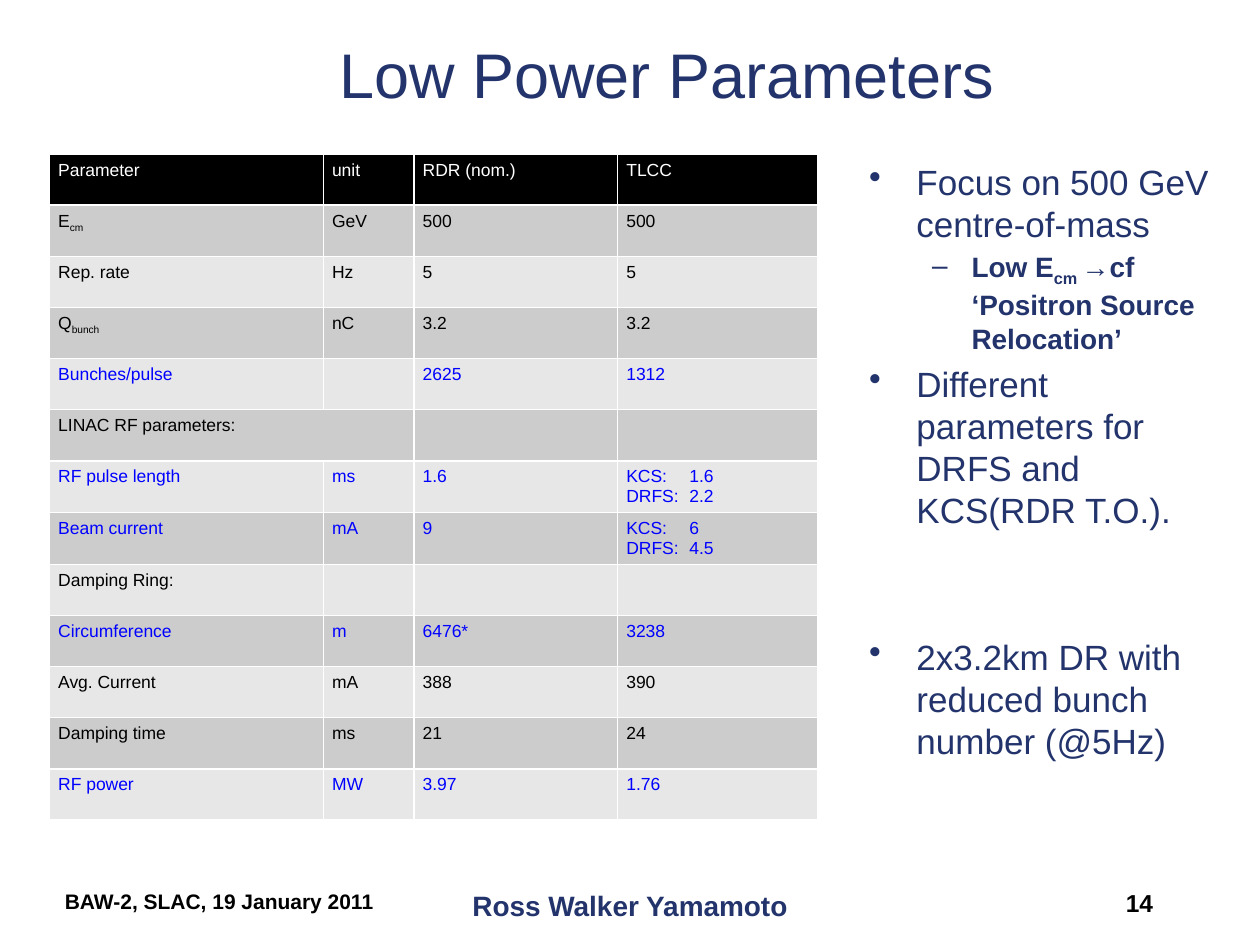
"""Build the Low Power Parameters slide."""
import lxml.etree
import pptx
import pptx.dml.color
import pptx.enum.text
import pptx.oxml.ns
import pptx.util

Pt = pptx.util.Pt
RGBColor = pptx.dml.color.RGBColor
ALIGN = pptx.enum.text.PP_ALIGN
ANCHOR = pptx.enum.text.MSO_ANCHOR
qn = pptx.oxml.ns.qn

NAVY = RGBColor(0x23, 0x34, 0x6C)
BLUE = RGBColor(0x00, 0x00, 0xFF)
BLACK = RGBColor(0x00, 0x00, 0x00)
WHITE = RGBColor(0xFF, 0xFF, 0xFF)
DARK_BAND = RGBColor(0xCC, 0xCC, 0xCC)
LIGHT_BAND = RGBColor(0xE7, 0xE7, 0xE7)

FONT = "Arial"
SUBSCRIPT_MARK = "|"

ROWS = [
    (WHITE, ["Parameter", "unit", "RDR (nom.)", "TLCC"]),
    (BLACK, ["E|cm", "GeV", "500", "500"]),
    (BLACK, ["Rep. rate", "Hz", "5", "5"]),
    (BLACK, ["Q|bunch", "nC", "3.2", "3.2"]),
    (BLUE, ["Bunches/pulse", "", "2625", "1312"]),
    (BLACK, ["LINAC RF parameters:", "", "", ""]),
    (BLUE, ["RF pulse length", "ms", "1.6", "KCS: \t1.6\nDRFS: \t2.2"]),
    (BLUE, ["Beam current", "mA", "9", "KCS: \t6\nDRFS: \t4.5"]),
    (BLACK, ["Damping Ring:", "", "", ""]),
    (BLUE, ["Circumference", "m", "6476*", "3238"]),
    (BLACK, ["Avg. Current", "mA", "388", "390"]),
    (BLACK, ["Damping time", "ms", "21", "24"]),
    (BLUE, ["RF power", "MW", "3.97", "1.76"]),
]
MERGED_ROW = 5
COLUMN_WIDTHS = [156.5, 51.8, 116.4, 114.5]
ROW_HEIGHT = 29.25
TABLE_LEFT, TABLE_TOP = 28.3, 88

BULLETS = [
    ("Focus on 500 GeV centre-of-mass", 0, 0),
    ("Low E|cm |→cf ‘Positron Source Relocation’", 1, 3.2),
    ("Different parameters for DRFS and KCS(RDR T.O.).", 0, 4),
    ("2x3.2km DR with reduced bunch number (@5Hz)", 0, 60),
]
LEVELS = [
    {"mark": "•", "margin": 27, "hang": 27, "size": 20, "bold": False},
    {"mark": "–", "margin": 58.5, "hang": 22.5, "size": 16, "bold": True},
]

LABELS = [
    ("Low Power Parameters", (102, 6, 558, 72), 36, NAVY, False, ALIGN.CENTER, ANCHOR.MIDDLE),
    ("BAW-2, SLAC, 19 January 2011", (30, 504, 244, 36), 12, BLACK, True, ALIGN.LEFT, ANCHOR.TOP),
    ("Ross Walker Yamamoto", (246, 504, 228, 36), 16, NAVY, True, ALIGN.CENTER, ANCHOR.TOP),
    ("14", (516, 504, 150, 36), 14, BLACK, True, ALIGN.RIGHT, ANCHOR.TOP),
]
BODY_AREA = (489.6, 88, 216, 402)


def write(para, text, size, color, bold=False):
    for index, part in enumerate(text.split(SUBSCRIPT_MARK)):
        if part:
            span = para.add_run()
            span.text = part
            if index % 2:
                span.font._element.set("baseline", "-25000")
    para.font.name = FONT
    para.font.size = Pt(size)
    para.font.bold = bold
    para.font.color.rgb = color


def add_box(page, area):
    box = page.shapes.add_textbox(*map(Pt, area))
    box.text_frame.word_wrap = True
    return box.text_frame


def add_borders(cell):
    properties = cell._tc.get_or_add_tcPr()
    for index, side in enumerate(("lnL", "lnR", "lnT", "lnB")):
        line = lxml.etree.Element(qn("a:" + side), w=str(Pt(1)))
        fill = lxml.etree.SubElement(line, qn("a:solidFill"))
        lxml.etree.SubElement(fill, qn("a:srgbClr"), val=str(WHITE))
        properties.insert(index, line)


def add_parameter_table(page):
    frame = page.shapes.add_table(
        len(ROWS), len(COLUMN_WIDTHS), Pt(TABLE_LEFT), Pt(TABLE_TOP),
        Pt(sum(COLUMN_WIDTHS)), Pt(ROW_HEIGHT * len(ROWS)))
    table = frame.table
    table.first_row = False
    table.horz_banding = False
    for column, width in zip(table.columns, COLUMN_WIDTHS):
        column.width = Pt(width)
    for index, (color, texts) in enumerate(ROWS):
        table.rows[index].height = Pt(ROW_HEIGHT)
        band = DARK_BAND if index % 2 else LIGHT_BAND
        for cell, text in zip(table.rows[index].cells, texts):
            cell.margin_left = cell.margin_right = Pt(5)
            cell.margin_top = cell.margin_bottom = Pt(3.6)
            cell.fill.solid()
            cell.fill.fore_color.rgb = band if index else BLACK
            add_borders(cell)
            for number, line in enumerate(text.split("\n")):
                paras = cell.text_frame
                para = paras.add_paragraph() if number else paras.paragraphs[0]
                write(para, line, 10, color)
    table.cell(MERGED_ROW, 0).merge(table.cell(MERGED_ROW, 1))


def add_bullets(page):
    frame = add_box(page, BODY_AREA)
    for index, (text, depth, gap) in enumerate(BULLETS):
        level = LEVELS[depth]
        para = frame.add_paragraph() if index else frame.paragraphs[0]
        para.level = depth
        if gap:
            para.space_before = Pt(gap)
        properties = para._p.get_or_add_pPr()
        properties.set("marL", str(Pt(level["margin"])))
        properties.set("indent", str(-Pt(level["hang"])))
        lxml.etree.SubElement(properties, qn("a:buChar"), char=level["mark"])
        write(para, text, level["size"], NAVY, level["bold"])


def add_labels(page):
    for text, area, size, color, bold, align, anchor in LABELS:
        frame = add_box(page, area)
        frame.vertical_anchor = anchor
        para = frame.paragraphs[0]
        para.alignment = align
        write(para, text, size, color, bold)


def main():
    deck = pptx.Presentation()
    deck.slide_width, deck.slide_height = Pt(720), Pt(540)
    page = deck.slides.add_slide(deck.slide_layouts[6])
    add_parameter_table(page)
    add_bullets(page)
    add_labels(page)
    deck.save("out.pptx")


if __name__ == "__main__":
    main()
